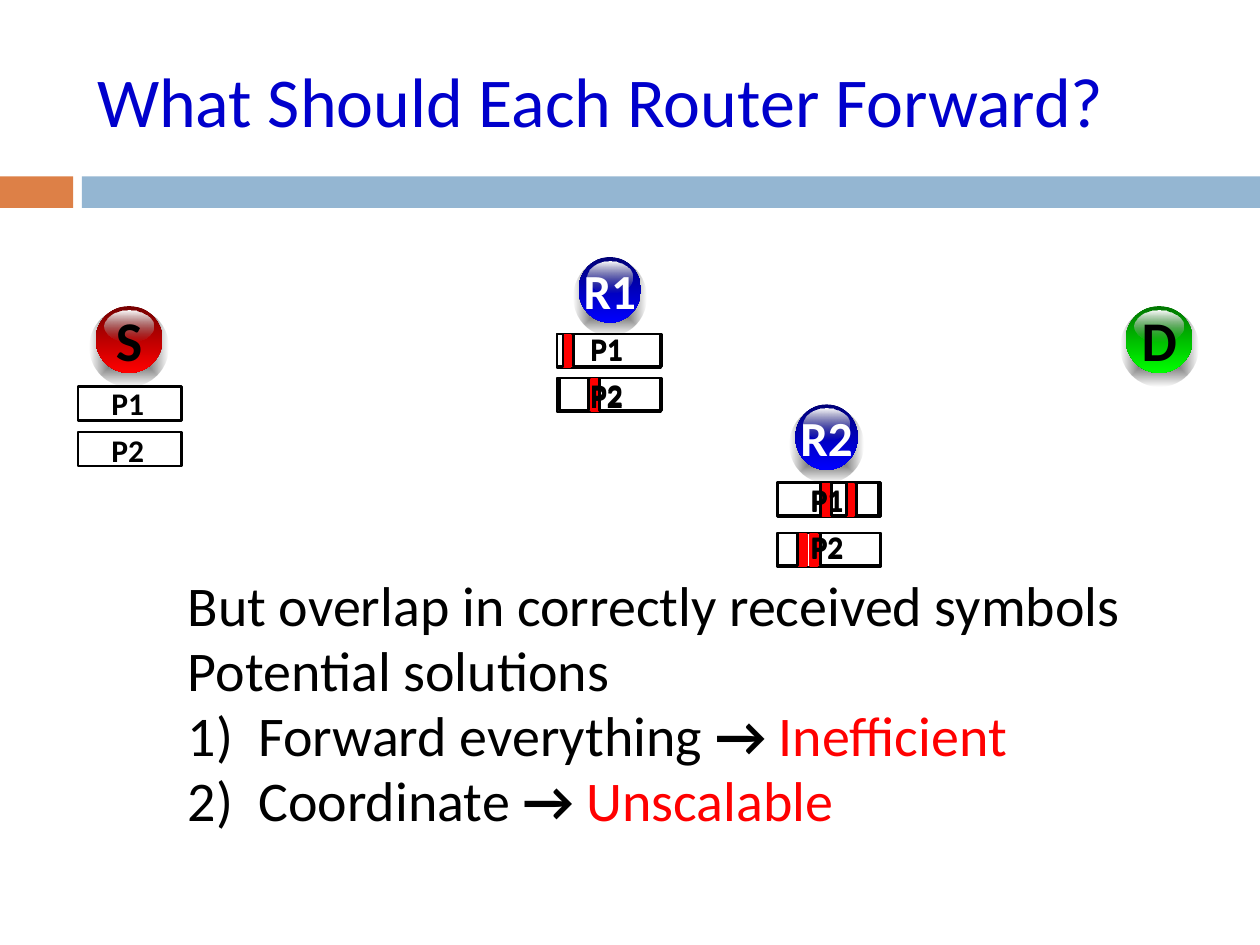
from lxml import etree
from pptx import Presentation
from pptx.dml.color import RGBColor
from pptx.enum.shapes import MSO_SHAPE
from pptx.enum.text import MSO_ANCHOR, MSO_AUTO_SIZE, PP_ALIGN
from pptx.oxml import parse_xml
from pptx.oxml.ns import nsdecls, qn
from pptx.util import Inches, Pt

RECTANGLE, OVAL = MSO_SHAPE.RECTANGLE, MSO_SHAPE.OVAL
LEFT, CENTER = PP_ALIGN.LEFT, PP_ALIGN.CENTER
MIDDLE, TOP = MSO_ANCHOR.MIDDLE, MSO_ANCHOR.TOP
NO_AUTOFIT = MSO_AUTO_SIZE.NONE

BLACK = RGBColor(0x00, 0x00, 0x00)
WHITE = RGBColor(0xFF, 0xFF, 0xFF)
GRAY = RGBColor(0x76, 0x76, 0x76)
RED = RGBColor(0xFF, 0x00, 0x00)
DARK_RED = RGBColor(0x76, 0x00, 0x00)
GREEN = RGBColor(0x00, 0xFF, 0x00)
DARK_GREEN = RGBColor(0x00, 0x76, 0x00)
BLUE = RGBColor(0x00, 0x00, 0xFF)
DARK_BLUE = RGBColor(0x00, 0x00, 0x76)
TITLE_BLUE = RGBColor(0x00, 0x00, 0xCC)
ORANGE = RGBColor(0xDD, 0x80, 0x47)
LIGHT_BLUE = RGBColor(0x94, 0xB6, 0xD2)

COLUMNS, ROWS = 100, 75  # grid cells across and down the slide
PACKET_WIDTH, PACKET_HEIGHT, MARK_WIDTH = 8.2, 2.7, 0.6
DOWNWARD = '<a:lin ang="5400000" scaled="1"/>'
OUTWARD = ('<a:path path="shape"><a:fillToRect l="50000" t="50000" '
           'r="50000" b="50000"/></a:path>')


class SlideBuilder:
    font = "Calibri"

    def __init__(self, presentation):
        self.slide = presentation.slides.add_slide(presentation.slide_layouts[1])
        self.column = presentation.slide_width / COLUMNS
        self.row = presentation.slide_height / ROWS

    def box(self, left, top, width, height):
        return (round(left * self.column), round(top * self.row),
                round(width * self.column), round(height * self.row))

    def style(self, paragraph, size, color=None, bold=False):
        paragraph.font.name = self.font
        paragraph.font.size = Pt(size)
        paragraph.font.bold = bold
        if color is not None:
            paragraph.font.color.rgb = color

    def place(self, placeholder, area, anchor):
        placeholder.left, placeholder.top, placeholder.width, placeholder.height = self.box(*area)
        frame = placeholder.text_frame
        frame.auto_size = NO_AUTOFIT
        frame.vertical_anchor = anchor
        return frame

    def title(self, text, area):
        frame = self.place(self.slide.shapes.title, area, MIDDLE)
        frame.text = text
        frame.paragraphs[0].alignment = LEFT
        self.style(frame.paragraphs[0], 40, TITLE_BLUE)

    def body(self, lines, area):
        frame = self.place(self.slide.placeholders[1], area, TOP)
        for index, (numbered, runs) in enumerate(lines):
            paragraph = frame.paragraphs[0] if index == 0 else frame.add_paragraph()
            paragraph.line_spacing = 0.8
            paragraph.space_before = Pt(6.4)
            properties = paragraph._p.get_or_add_pPr()
            indent = Inches(0.56 if numbered else 0.38)
            properties.set("marL", str(indent))
            properties.set("indent", str(-indent))
            if numbered:
                etree.SubElement(properties, qn("a:buFont"), typeface="+mj-lt")
                etree.SubElement(properties, qn("a:buAutoNum"), type="arabicParenR")
            else:
                etree.SubElement(properties, qn("a:buNone"))
            self.style(paragraph, 32)
            for text, color, bold in runs:
                run = paragraph.add_run()
                run.text = text
                run.font.color.rgb = color
                run.font.bold = bold

    def shape(self, kind, area, fill=None, line=None):
        shape = self.slide.shapes.add_shape(kind, *self.box(*area))
        shape.shadow.inherit = False
        if fill is None:
            shape.fill.background()
        else:
            shape.fill.solid()
            shape.fill.fore_color.rgb = fill
        if line is None:
            shape.line.fill.background()
        else:
            shape.line.color.rgb = line
            shape.line.width = Pt(1.5)
        return shape

    def gradient_oval(self, area, start, end, end_alpha=100, direction=DOWNWARD):
        properties = self.shape(OVAL, area)._element.spPr
        gradient = parse_xml(
            f'<a:gradFill {nsdecls("a")} rotWithShape="1"><a:gsLst>'
            f'<a:gs pos="0"><a:srgbClr val="{start}"/></a:gs>'
            f'<a:gs pos="100000"><a:srgbClr val="{end}">'
            f'<a:alpha val="{end_alpha * 1000}"/></a:srgbClr></a:gs>'
            f'</a:gsLst>{direction}</a:gradFill>')
        properties.replace(properties.find(qn("a:noFill")), gradient)

    def label(self, text, area, size, color=BLACK):
        frame = self.slide.shapes.add_textbox(*self.box(*area)).text_frame
        frame.word_wrap = False
        frame.margin_left = frame.margin_right = 0
        frame.vertical_anchor = MIDDLE
        paragraph = frame.paragraphs[0]
        paragraph.text = text
        paragraph.alignment = CENTER
        self.style(paragraph, size, color, bold=True)

    def node(self, text, center, top, width, height, dark, bright, size, color):
        def centered(share_wide, share_high, drop):
            wide, high = width * share_wide, height * share_high
            return center - wide / 2, top + drop, wide, high

        self.gradient_oval(centered(1.17, 1.17, 0.15), BLACK, BLACK, 0, OUTWARD)
        self.gradient_oval(centered(1, 1, 0), dark, bright)
        self.gradient_oval(centered(0.73, 0.47, 0.35), WHITE, GRAY, 0)
        self.label(text, centered(1.25, 1.15, -0.4), size, color)

    def packet(self, text, left, top, label_top, marks=(), pieces=()):
        self.shape(RECTANGLE, (left, top, PACKET_WIDTH, PACKET_HEIGHT), line=BLACK)
        for offset in marks:
            self.shape(RECTANGLE, (left + offset, top + 0.1, MARK_WIDTH, 2.5), RED, RED)
        for offset, width in pieces:
            self.shape(RECTANGLE, (left + offset, top, width, 2.6), line=BLACK)
        # Received packets carry a second label that thickens the first
        for shift in (0, 0.1) if marks else (0,):
            self.label(text, (left + 1.6, label_top + shift, 4.7, 4), 18)


def main():
    presentation = Presentation()
    presentation.slide_width, presentation.slide_height = Inches(10), Inches(7.5)
    builder = SlideBuilder(presentation)

    # Title and band
    builder.shape(RECTANGLE, (0, 14, 5.8, 2.5), ORANGE)
    builder.shape(RECTANGLE, (6.5, 14, 93.5, 2.5), LIGHT_BLUE)
    builder.title("What Should Each Router Forward?", (6.7, 2.5, 89.2, 10.8))

    # Source, routers and destination
    for text, center, top in (("R1", 48.4, 20.4), ("R2", 65.6, 32.1)):
        builder.node(text, center, top, 4.95, 5.2, DARK_BLUE, BLUE, 28, WHITE)
    builder.node("D", 92, 24.3, 5.3, 5.3, DARK_GREEN, GREEN, 32, BLACK)
    builder.node("S", 10.25, 24.3, 5.3, 5.3, DARK_RED, RED, 32, BLACK)

    # Packets: lost symbols are red marks between the received pieces
    packets = (
        ("P1", 6.2, 30.7, 30.0),
        ("P2", 6.2, 34.3, 33.7),
        ("P1", 44.2, 26.5, 25.6, (0.5,), ((0, 0.5), (1.3, 7))),
        ("P2", 44.2, 30, 29.3, (2.7,), ((0.2, 2.3), (3.4, 4.9))),
        ("P1", 61.7, 38.3, 37.6, (3.6, 5.5), ((0, 3.4), (4.3, 1.2), (6.3, 1.7))),
        ("P2", 61.7, 42.3, 41.3, (1.7, 2.6), ((0, 1.6), (3.4, 4.8))),
    )
    for packet in packets:
        builder.packet(*packet)

    # Potential solutions
    arrow = ("→ ", BLACK, True)
    builder.body((
        (False, [("But overlap in correctly received symbols", BLACK, False)]),
        (False, [("Potential solutions", BLACK, False)]),
        (True, [("Forward everything ", BLACK, False), arrow, ("Inefficient", RED, False)]),
        (True, [("Coordinate ", BLACK, False), arrow, ("Unscalable", RED, False)]),
    ), (13.9, 45.8, 102.8, 15.8))

    presentation.save("out.pptx")


if __name__ == "__main__":
    main()
